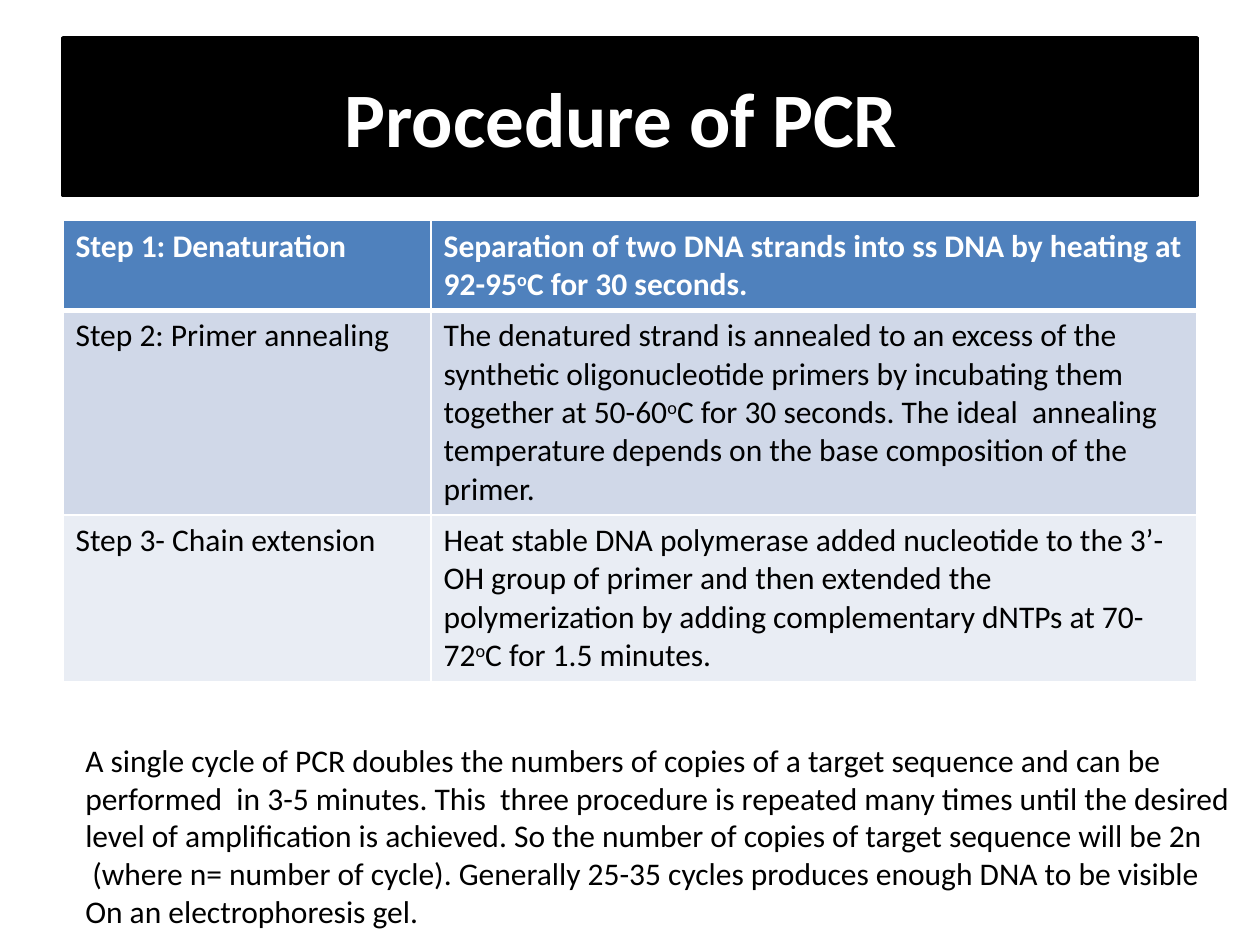
from lxml import etree
from pptx import Presentation
from pptx import util as u
from pptx.dml.color import RGBColor
from pptx.enum import shapes, text
from pptx.oxml import ns

BLACK = RGBColor(0x00, 0x00, 0x00)
WHITE = RGBColor(0xFF, 0xFF, 0xFF)
BLUE = RGBColor(0x4F, 0x81, 0xBD)
MIST = RGBColor(0xD0, 0xD8, 0xE8)
PALE = RGBColor(0xE9, 0xED, 0xF4)

HEAD = "Procedure of PCR "
# Each step: name, then text before and after the raised degree sign
STEPS = [
    ("Step 1: Denaturation",
     "Separation of two DNA strands into ss DNA by heating at 92-95",
     "C for 30 seconds."),
    ("Step 2: Primer annealing",
     "The denatured strand is annealed to an excess of the synthetic "
     "oligonucleotide primers by incubating them together at 50-60",
     "C for 30 seconds. The ideal  annealing  temperature depends on the "
     "base composition of the primer."),
    ("Step 3- Chain extension",
     "Heat stable DNA polymerase added nucleotide to the 3’-OH group of "
     "primer and then extended the polymerization by adding complementary "
     "dNTPs at 70-72",
     "C for 1.5 minutes."),
]
NOTES = [
    "A single cycle of PCR doubles the numbers of copies of a target sequence and can be",
    "performed  in 3-5 minutes. This  three procedure is repeated many times until the desired",
    "level of amplification is achieved. So the number of copies of target sequence will be 2n",
    " (where n= number of cycle). Generally 25-35 cycles produces enough DNA to be visible",
    "On an electrophoresis gel.",
]


class Deck:
    """Holds the text style and the current slide."""

    def __init__(self, slide, font="Calibri", size=18):
        self.slide, self.font, self.size = slide, font, size

    def run(self, para, words, color=BLACK, bold=False, size=None, raised=False):
        run = para.add_run()
        run.text = words
        font = run.font
        font.name, font.size, font.bold = self.font, u.Pt(size or self.size), bold
        font.color.rgb = color
        if raised:
            run._r.get_or_add_rPr().set("baseline", "30000")

    def banner(self, box, words):
        shape = self.slide.shapes.add_shape(shapes.MSO_SHAPE.RECTANGLE, *box)
        shape.shadow.inherit = False
        shape.fill.solid()
        shape.fill.fore_color.rgb = BLACK
        shape.line.color.rgb = BLACK
        shape.line.width = u.Pt(2)
        frame = shape.text_frame
        frame.word_wrap = True
        frame.vertical_anchor = text.MSO_ANCHOR.MIDDLE
        para = frame.paragraphs[0]
        para.alignment = text.PP_ALIGN.CENTER
        self.run(para, words, WHITE, True, 44)

    def edge(self, cell, side, width):
        line = etree.SubElement(cell._tc.get_or_add_tcPr(), ns.qn("a:ln" + side),
                                w=str(u.Pt(width)))
        fill = etree.SubElement(line, ns.qn("a:solidFill"))
        etree.SubElement(fill, ns.qn("a:srgbClr"), val=str(WHITE))

    def table(self, box, widths, height, steps):
        frame = self.slide.shapes.add_table(len(steps), len(widths), *box)
        grid = frame.table
        for col, width in zip(grid.columns, widths):
            col.width = width
        for row in grid.rows:
            row.height = height
        frame.height = box[3]
        for i, (name, before, after) in enumerate(steps):
            top = i == 0
            look = dict(color=WHITE if top else BLACK, bold=top)
            for cell in grid.rows[i].cells:
                for side in "LRTB":
                    thick = (top and side == "B") or (i == 1 and side == "T")
                    self.edge(cell, side, 3 if thick else 1)
                cell.fill.solid()
                cell.fill.fore_color.rgb = (BLUE, MIST, PALE)[i]
            left, right = (c.text_frame.paragraphs[0] for c in grid.rows[i].cells)
            self.run(left, name, **look)
            self.run(right, before, **look)
            self.run(right, "o", raised=True, **look)
            self.run(right, after, **look)

    def note(self, box, lines):
        frame = self.slide.shapes.add_textbox(*box).text_frame
        frame.word_wrap = False
        frame.auto_size = text.MSO_AUTO_SIZE.SHAPE_TO_FIT_TEXT
        for i, line in enumerate(lines):
            para = frame.add_paragraph() if i else frame.paragraphs[0]
            self.run(para, line)


def cm(*nums):
    return [u.Cm(n) for n in nums]


def main():
    show = Presentation()
    show.slide_width, show.slide_height = cm(25.4, 19.05)
    deck = Deck(show.slides.add_slide(show.slide_layouts[6]))

    # Title banner
    deck.banner(cm(1.27, 0.76, 22.86, 3.18), HEAD)
    # Table of steps
    deck.table(cm(1.27, 4.45, 22.86, 9.14), cm(7.42, 15.44), u.Cm(1.04), STEPS)
    # Closing note
    deck.note(cm(1.47, 14.81, 24.03, 4.11), NOTES)

    show.save("out.pptx")


if __name__ == "__main__":
    main()
